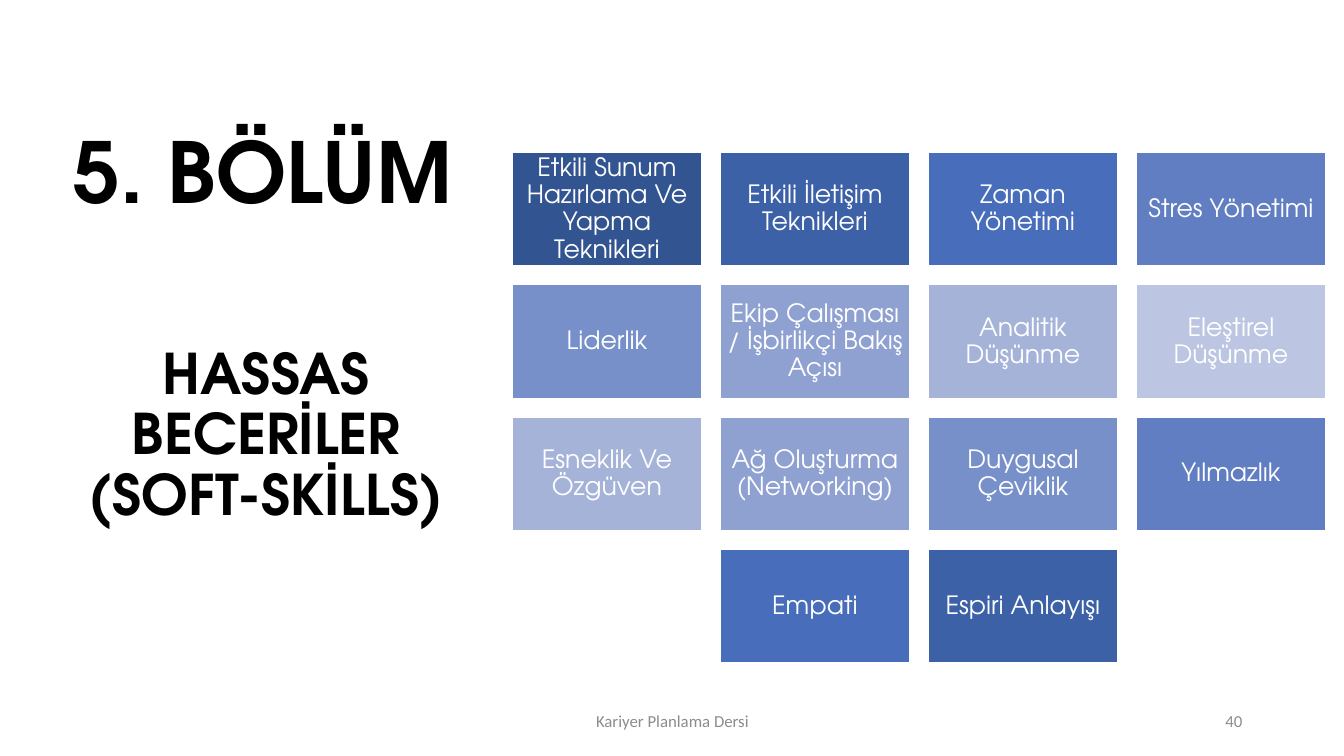
from pptx import Presentation
from pptx.dml.color import RGBColor
from pptx.enum.shapes import MSO_SHAPE
from pptx.enum.text import MSO_ANCHOR, PP_ALIGN
from pptx.util import Inches, Pt

LEFT, CENTER, RIGHT = PP_ALIGN.LEFT, PP_ALIGN.CENTER, PP_ALIGN.RIGHT
MIDDLE, BOTTOM = MSO_ANCHOR.MIDDLE, MSO_ANCHOR.BOTTOM

HEADING_FONT = "TeX Gyre Adventor"
FOOTER_FONT = "Calibri"
WHITE, BLACK, GREY = "FFFFFF", "000000", "8C8C8C"

SKILL_ROWS = [
    ["Etkili Sunum Hazırlama Ve Yapma Teknikleri", "Etkili İletişim Teknikleri",
     "Zaman Yönetimi", "Stres Yönetimi"],
    ["Liderlik", "Ekip Çalışması / İşbirlikçi Bakış Açısı",
     "Analitik Düşünme", "Eleştirel Düşünme"],
    ["Esneklik Ve Özgüven", "Ağ Oluşturma (Networking)",
     "Duygusal Çeviklik", "Yılmazlık"],
    ["Empati", "Espiri Anlayışı"],
]
# Dark to light; the tiles run through the ramp and then back again.
BLUES = ["325491", "3C61A7", "476DBB", "607EC1", "7790C9", "8FA1D1", "A6B3D9", "BCC6E2"]

HEADING = {"name": HEADING_FONT, "bold": True}
FOOTER = {"name": FOOTER_FONT, "size": Pt(12)}
# text, (left, top, width, height), anchor, alignment, line spacing, colour, font
LABELS = [
    ("5. BÖLÜM", (0.63, 0.5, 4.3, 1.75), BOTTOM, LEFT, 0.9, BLACK,
     {**HEADING, "size": Pt(60)}),
    ("HASSAS BECERİLER (SOFT-SKİLLS)", (0.49, 3.07, 4.3, 2.52), MIDDLE, CENTER, 0.9, BLACK,
     {**HEADING, "size": Pt(40)}),
    ("Kariyer Planlama Dersi", (4.42, 6.95, 4.5, 0.4), MIDDLE, CENTER, 1.0, GREY, FOOTER),
    ("40", (9.42, 6.95, 3, 0.4), MIDDLE, RIGHT, 1.0, GREY, FOOTER),
]

COLUMNS = 4
GRID_LEFT, GRID_TOP = 5.08, 1.51
TILE_WIDTH, TILE_HEIGHT = 1.88, 1.13
COLUMN_STEP, ROW_STEP = 2.063, 1.313
TILE_INSET = 0.07


def color(hex_code):
    return RGBColor.from_string(hex_code)


def write(shape, text, anchor, alignment, spacing, hex_code, font):
    frame = shape.text_frame
    frame.word_wrap = True
    frame.vertical_anchor = anchor
    frame.text = text
    paragraph = frame.paragraphs[0]
    paragraph.alignment = alignment
    paragraph.line_spacing = spacing
    for attribute, value in font.items():
        setattr(paragraph.font, attribute, value)
    paragraph.font.color.rgb = color(hex_code)


def add_tile(slide, skill, column, row, fill):
    tile = slide.shapes.add_shape(
        MSO_SHAPE.RECTANGLE,
        Inches(GRID_LEFT + column * COLUMN_STEP), Inches(GRID_TOP + row * ROW_STEP),
        Inches(TILE_WIDTH), Inches(TILE_HEIGHT))
    tile.shadow.inherit = False
    tile.fill.solid()
    tile.fill.fore_color.rgb = color(fill)
    tile.line.color.rgb = color(WHITE)
    tile.line.width = Pt(1)
    for side in ("left", "top", "right", "bottom"):
        setattr(tile.text_frame, f"margin_{side}", Inches(TILE_INSET))
    write(tile, skill, MIDDLE, CENTER, 0.9, WHITE, {"name": HEADING_FONT, "size": Pt(18)})


def main():
    deck = Presentation()
    deck.slide_width, deck.slide_height = Inches(13.33), Inches(7.5)
    slide = deck.slides.add_slide(deck.slide_layouts[6])

    for text, place, *style in LABELS:
        write(slide.shapes.add_textbox(*map(Inches, place)), text, *style)

    last_blue = len(BLUES) - 1
    for row, skills in enumerate(SKILL_ROWS):
        first_column = (COLUMNS - len(skills)) / 2
        for position, skill in enumerate(skills):
            step = row * COLUMNS + position
            blue = BLUES[min(step, 2 * last_blue - step)]
            add_tile(slide, skill, first_column + position, row, blue)

    deck.save("out.pptx")


if __name__ == "__main__":
    main()
